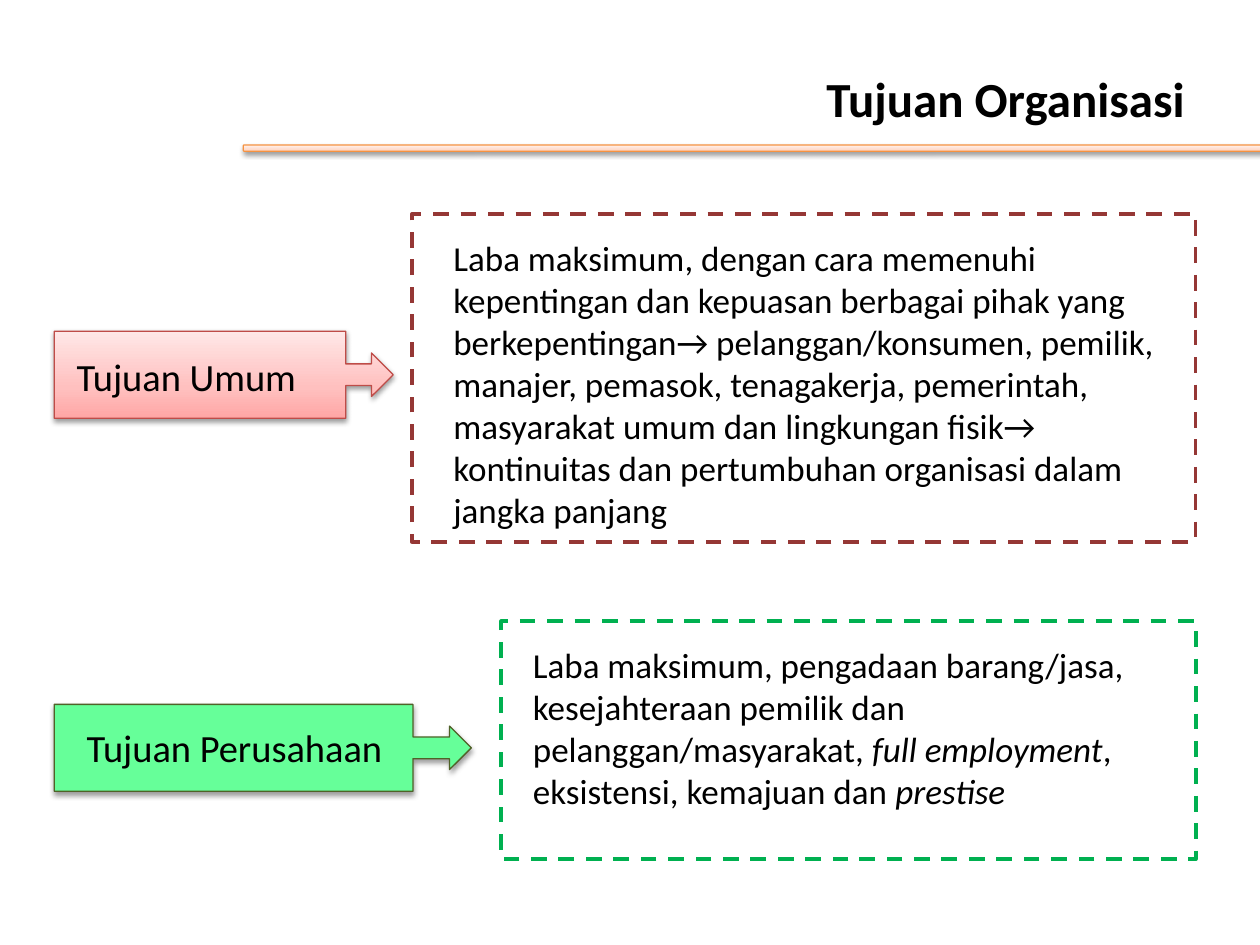
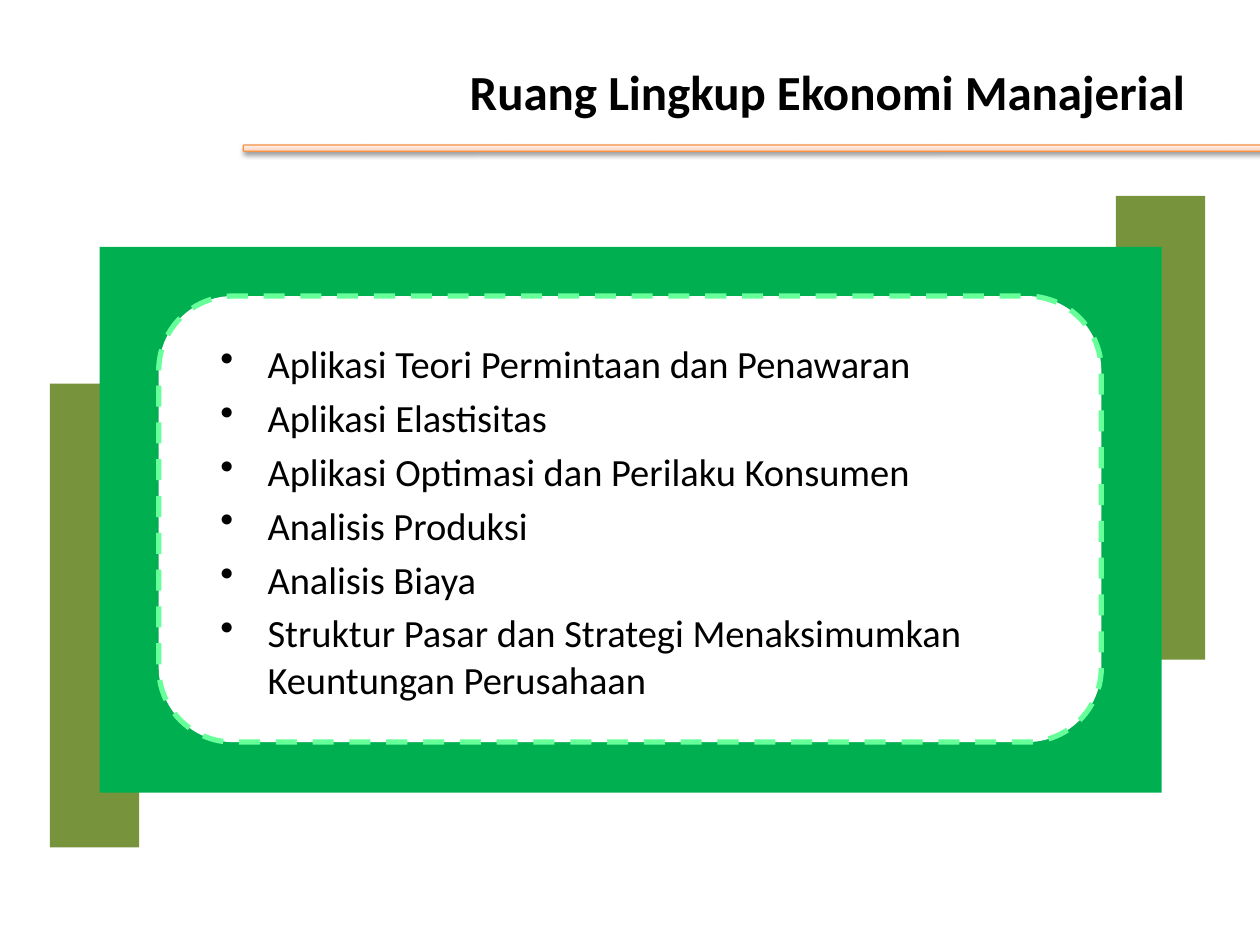
from lxml import etree
from pptx import Presentation
from pptx.dml.color import RGBColor
from pptx.enum.dml import MSO_LINE
from pptx.enum.shapes import MSO_SHAPE
from pptx.enum.text import MSO_ANCHOR, MSO_AUTO_SIZE, PP_ALIGN
from pptx.oxml.ns import qn
from pptx.util import Pt

RECT = MSO_SHAPE.RECTANGLE
ROUND = MSO_SHAPE.ROUNDED_RECTANGLE
CALLOUT = MSO_SHAPE.RIGHT_ARROW_CALLOUT
DASH = MSO_LINE.DASH
MIDDLE = MSO_ANCHOR.MIDDLE
GROW = MSO_AUTO_SIZE.SHAPE_TO_FIT_TEXT
LEFT, RIGHT = PP_ALIGN.LEFT, PP_ALIGN.RIGHT

FONT = "Calibri"
COLORS = {
    "text": "000000", "white": "FFFFFF", "green": "00B050", "mint": "66FF99",
    "olive": "77933C", "moss": "4F6228", "wine": "953735", "red": "BF4C48",
    "orange": "F69240",
}
FADES = {
    "rose": ((0, "FFA6A5"), (35, "FFC0BF"), (100, "FFE7E7")),
    "peach": ((0, "FFD2BD"), (35, "FFDED0"), (100, "FFF2ED")),
}
EDGE = 684  # right edge of every title

GOAL = ("Laba maksimum, dengan cara memenuhi kepentingan dan kepuasan berbagai "
        "pihak yang berkepentingan→ pelanggan/konsumen, pemilik, manajer, pemasok, "
        "tenagakerja, pemerintah, masyarakat umum dan lingkungan fisik→ kontinuitas "
        "dan pertumbuhan organisasi dalam jangka panjang")
FIRM = (("Laba maksimum, pengadaan barang/jasa, kesejahteraan pemilik dan "
         "pelanggan/masyarakat, ", False), ("full employment", True),
        (", eksistensi, kemajuan dan ", False), ("prestise", True))
TOPICS = (
    "Aplikasi Teori Permintaan dan Penawaran",
    "Aplikasi Elastisitas",
    "Aplikasi Optimasi dan Perilaku Konsumen",
    "Analisis Produksi",
    "Analisis Biaya",
    "Struktur Pasar dan Strategi Menaksimumkan Keuntungan Perusahaan",
)


def color(name):
    return RGBColor.from_string(COLORS[name])


class Deck:
    def __init__(self):
        self.prs = Presentation()
        self.prs.slide_width, self.prs.slide_height = Pt(720), Pt(540)
        self.slide = None

    def start(self, title, left, top):
        """Add a slide with its title and the rule below it."""
        self.slide = self.prs.slides.add_slide(self.prs.slide_layouts[6])
        frame = self.text((left, top, EDGE - left, 61), [title], 28, align=RIGHT)
        frame.vertical_anchor = MIDDLE
        frame.paragraphs[0].font.bold = True
        rule = self.shape(ROUND, (139, 82.8, 602, 3.6), "peach", "orange", 0.75)
        self.shade(rule)

    def shape(self, kind, box, fill, line=None, width=1.0, dash=None):
        item = self.slide.shapes.add_shape(kind, *map(Pt, box))
        item.shadow.inherit = False
        if fill in FADES:
            self.fade(item, FADES[fill])
        else:
            item.fill.solid()
            item.fill.fore_color.rgb = color(fill)
        if line:
            item.line.color.rgb = color(line)
            item.line.width = Pt(width)
            item.line.dash_style = dash
        else:
            item.line.fill.background()
        return item

    def fade(self, item, stops):
        """Fill with a gradient that runs from bottom to top."""
        item.fill.gradient()
        item.fill.gradient_angle = 90
        group = item._element.spPr.find(qn("a:gradFill")).find(qn("a:gsLst"))
        for old in list(group):
            group.remove(old)
        for place, tint in stops:
            stop = etree.SubElement(group, qn("a:gs"), pos=str(place * 1000))
            etree.SubElement(stop, qn("a:srgbClr"), val=tint)

    def shade(self, item):
        """Give a soft shadow straight below."""
        group = item._element.spPr.find(qn("a:effectLst"))
        cast = etree.SubElement(
            group, qn("a:outerShdw"), blurRad=str(Pt(3.1)), dist=str(Pt(1.6)),
            dir="5400000", rotWithShape="0")
        tint = etree.SubElement(cast, qn("a:srgbClr"), val=COLORS["text"])
        etree.SubElement(tint, qn("a:alpha"), val="38000")

    def text(self, box, items, size, align=LEFT, space=0.0):
        """Write one paragraph per item: a string or (text, italic) pairs."""
        frame = self.slide.shapes.add_textbox(*map(Pt, box)).text_frame
        frame.word_wrap = True
        for i, item in enumerate(items):
            para = frame.add_paragraph() if i else frame.paragraphs[0]
            para.alignment = align
            para.space_before = Pt(space)
            para.font.name, para.font.size = FONT, Pt(size)
            para.font.color.rgb = color("text")
            if isinstance(item, str):
                para.text = item
                continue
            for part, slant in item:
                run = para.add_run()
                run.text = part
                run.font.italic = slant
        return frame

    def bullets(self, box, items, size):
        frame = self.text(box, items, size, space=size * 0.2)
        for para in frame.paragraphs:
            props = para._p.get_or_add_pPr()
            props.set("marL", str(Pt(27)))
            props.set("indent", str(Pt(-27)))
            mark = etree.Element(qn("a:buChar"), char="•")
            props.find(qn("a:spcBef")).addnext(mark)

    def panel(self, box, line, inner, item):
        """Draw a dashed box with a text over it."""
        self.shape(RECT, box, "white", line, 2.25, DASH)
        self.text(inner, [item], 20, space=4)

    def callout(self, box, fill, line, label, spot):
        arrow = self.shape(CALLOUT, box, fill, line, 0.75)
        for i, part in enumerate((0.25, 0.25, 0.25, 0.86)):
            arrow.adjustments[i] = part
        self.shade(arrow)
        frame = self.text(spot, [label], 22)
        frame.word_wrap = False
        frame.auto_size = GROW


def goals(deck):
    deck.start("Tujuan Organisasi", 456.5, 25.7)
    deck.panel((235.4, 122.4, 447.8, 187.2), "wine", (252, 131.8, 436.3, 166.3), GOAL)
    deck.panel((286.5, 355, 396.7, 136), "green", (297.4, 364.3, 385.2, 126.7), FIRM)
    deck.callout((31, 189.3, 193.7, 49.7), "rose", "red",
                 "Tujuan Umum", (36.7, 198, 141, 33.8))
    deck.callout((31, 402.5, 238.3, 49.7), "mint", "moss",
                 "Tujuan Perusahaan", (42.5, 410.4, 185, 33.8))


def scope(deck):
    deck.start("Ruang Lingkup Ekonomi Manajerial", 36, 21.6)
    for left, top in ((637.6, 112), (28.5, 219.2)):
        deck.shape(RECT, (left, top, 51.1, 265), "olive")
    deck.shape(RECT, (56.9, 141.1, 607, 311.8), "green")
    deck.shape(ROUND, (90.7, 169.2, 538.6, 254.9), "white", "mint", 3, DASH)
    deck.bullets((118.8, 190.8, 478.8, 219.6), TOPICS, 22)


def main():
    deck = Deck()
    goals(deck)
    scope(deck)
    deck.prs.save("out.pptx")


if __name__ == "__main__":
    main()
